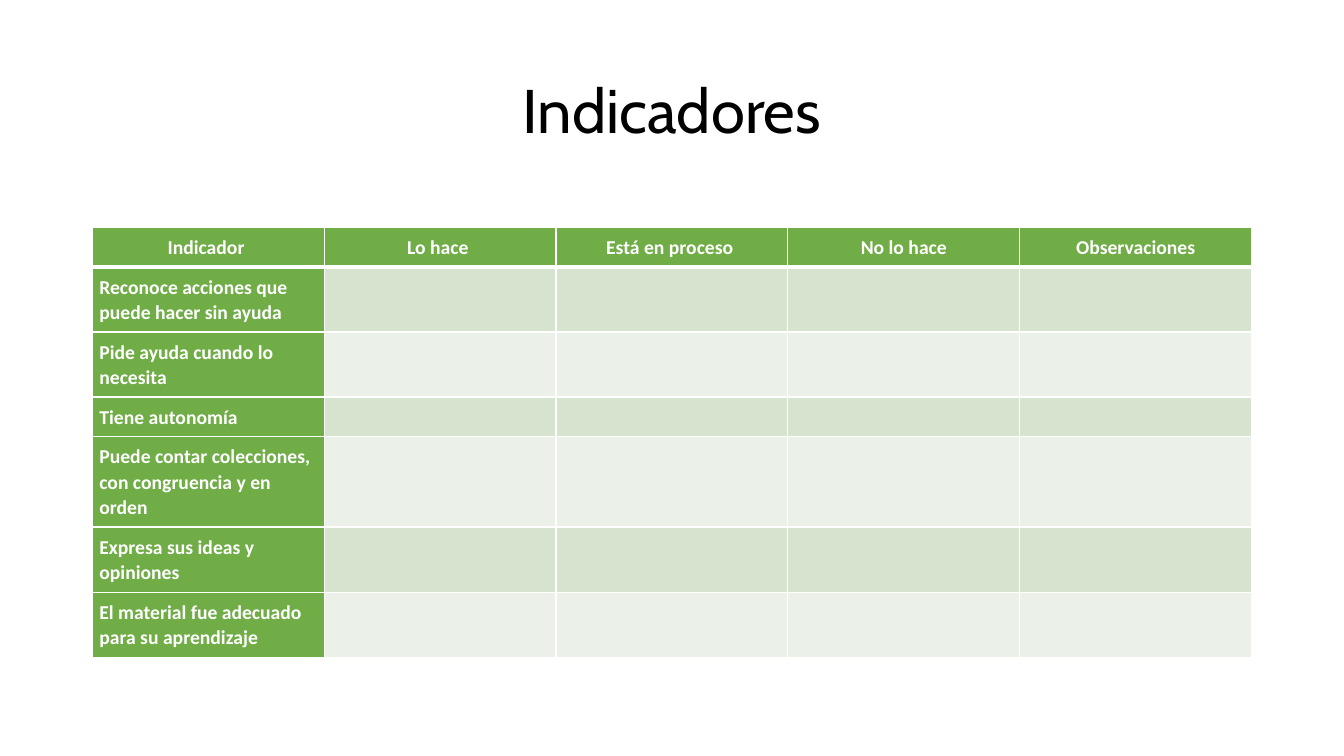
"""Build the slide with the table of indicators."""
import pptx
import pptx.util
import pptx.dml.color
import pptx.enum.text
import pptx.oxml
import pptx.oxml.ns

Pt = pptx.util.Pt
ALIGN = pptx.enum.text.PP_ALIGN
MIDDLE = pptx.enum.text.MSO_ANCHOR.MIDDLE

TITLE = "Indicadores"
HEADS = ["Indicador ", "Lo hace ", "Está en proceso ", "No lo hace", "Observaciones"]
ITEMS = [
    ("Reconoce acciones que puede hacer sin ayuda ", 2),
    ("Pide ayuda cuando lo necesita ", 2),
    ("Tiene autonomía ", 1),
    ("Puede contar colecciones, con congruencia y en orden", 3),
    ("Expresa sus ideas y opiniones ", 2),
    ("El material fue adecuado para su aprendizaje", 2),
]
GREEN, WHITE, BLACK = "70AD47", "FFFFFF", "000000"
BANDS = ["D5E3CF", "EBF1E9"]
LEFT, WIDTH, TOP = 66, 828, 162.4
INSET, LINE = 5, 18.2


def color(code):
    return pptx.dml.color.RGBColor.from_string(code)


def write(frame, text, size=14, font="Calibri", ink=WHITE, bold=True,
          align=ALIGN.LEFT, lead=1.07, after=8):
    par = frame.paragraphs[0]
    par.alignment, par.line_spacing, par.space_after = align, lead, Pt(after)
    target = par.font
    if text:
        run = par.add_run()
        run.text = text
        target = run.font
    target.size, target.name, target.bold = Pt(size), font, bold
    target.color.rgb = color(ink)


def edge(cell, side, width):
    props = cell._tc.get_or_add_tcPr()
    space = pptx.oxml.ns.nsdecls("a")
    props.append(pptx.oxml.parse_xml(
        f'<a:ln{side} {space} w="{Pt(width)}"><a:solidFill>'
        f'<a:srgbClr val="{WHITE}"/></a:solidFill></a:ln{side}>'))


def style(cell, row, fill):
    cell.margin_left = cell.margin_right = Pt(INSET)
    cell.margin_top = cell.margin_bottom = Pt(INSET)
    for side in "LRTB":
        thick = (row, side) in [(0, "B"), (1, "T")]
        edge(cell, side, 3 if thick else 1)
    cell.fill.solid()
    cell.fill.fore_color.rgb = color(fill)


def main():
    deck = pptx.Presentation()
    deck.slide_width, deck.slide_height = Pt(960), Pt(540)
    slide = deck.slides.add_slide(deck.slide_layouts[5])

    title = slide.shapes.title
    title.left, title.top = Pt(LEFT), Pt(28.75)
    title.width, title.height = Pt(WIDTH), Pt(104.4)
    title.text_frame.vertical_anchor = MIDDLE
    write(title.text_frame, TITLE, size=44, font="Cabin", ink=BLACK,
          bold=False, align=ALIGN.CENTER, lead=0.9, after=0)

    blank = [""] * (len(HEADS) - 1)
    rows = [HEADS] + [[text] + blank for text, _ in ITEMS]
    tall = [2 * INSET + LINE * count for count in [1] + [n for _, n in ITEMS]]
    frame = slide.shapes.add_table(len(rows), len(HEADS), Pt(LEFT), Pt(TOP),
                                   Pt(WIDTH), Pt(sum(tall)))
    table = frame.table
    for col in table.columns:
        col.width = Pt(WIDTH / len(HEADS))
    for r, texts in enumerate(rows):
        table.rows[r].height = Pt(tall[r])
        for c, text in enumerate(texts):
            cell = table.cell(r, c)
            head = r == 0 or c == 0
            style(cell, r, GREEN if head else BANDS[(r - 1) % 2])
            write(cell.text_frame, text,
                  align=ALIGN.CENTER if r == 0 else ALIGN.LEFT)

    deck.save("out.pptx")


if __name__ == "__main__":
    main()
